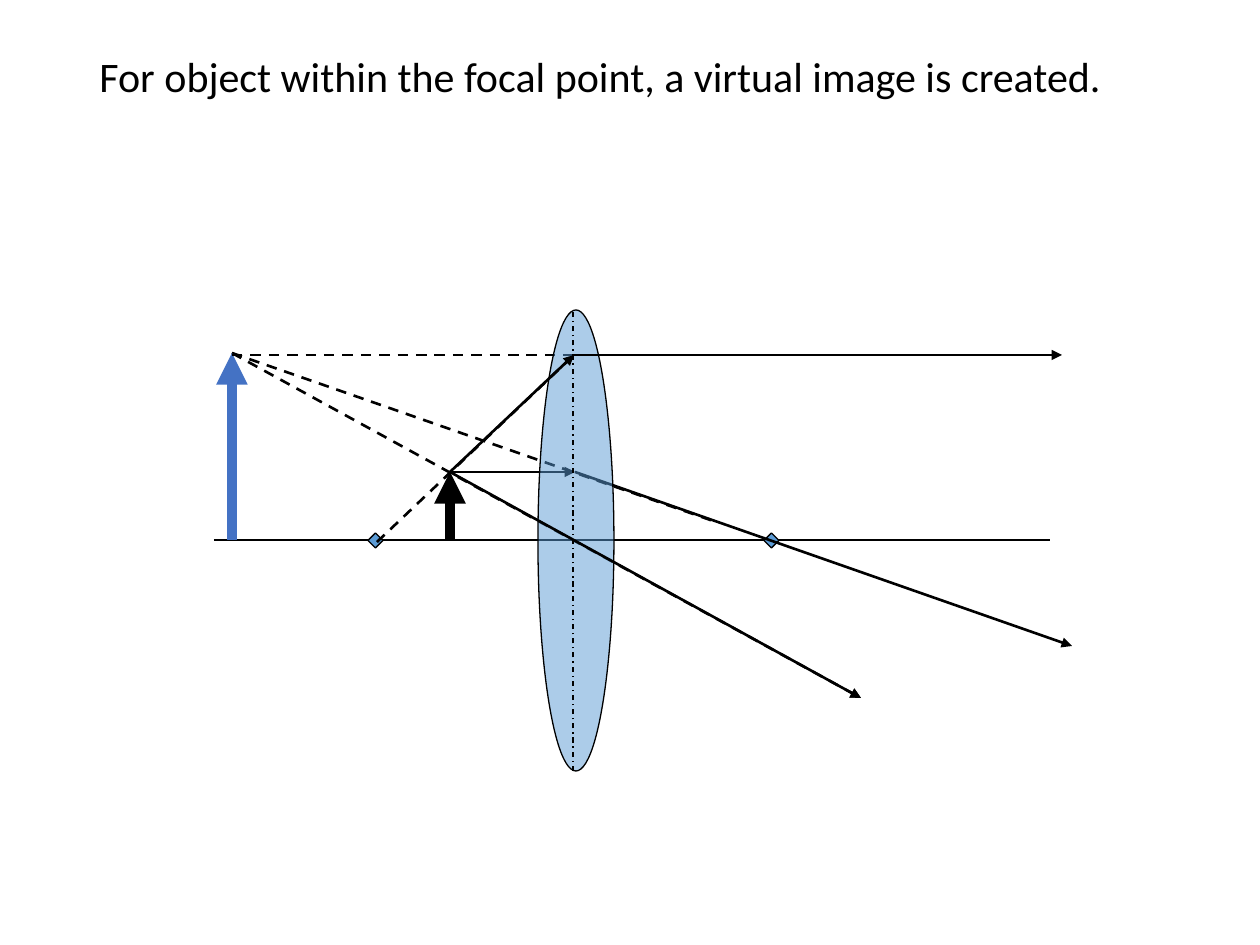
from pptx import Presentation
from pptx import util as u
from pptx.dml.color import RGBColor
from pptx.enum import dml, shapes, text
from pptx.oxml.ns import qn
from lxml import etree

BLACK, LENS, IMAGE = "000000", "5B9BD5", "4472C4"
DASH, DASH_DOT = dml.MSO_LINE.DASH, dml.MSO_LINE.DASH_DOT


def rgb(value):
    return RGBColor.from_string(value)


def px(n):
    return u.Emu(round(n * 914400 / 126))


def assign(obj, **values):
    for name, value in values.items():
        setattr(obj, name, value)


class Diagram:
    """Draws the elements of a ray diagram on one slide."""

    font = {"name": "Calibri", "size": u.Pt(24)}
    thin, ray_width, thick = 0.75, 1.5, 6

    def __init__(self, slide):
        self.s = slide

    def stroke(self, line, width, color=BLACK, dash=None):
        line.color.rgb = rgb(color)
        assign(line, width=u.Pt(width), dash_style=dash)

    def line(self, start, end, width=ray_width, color=BLACK, dash=None, arrow=False):
        sp = self.s.shapes.add_connector(
            shapes.MSO_CONNECTOR.STRAIGHT, *map(px, (*start, *end)))
        self.stroke(sp.line, width, color, dash)
        props = sp._element.spPr
        if arrow:
            etree.SubElement(props.find(qn("a:ln")), qn("a:tailEnd"), type="triangle")
        etree.SubElement(props, qn("a:effectLst"))

    def shape(self, kind, box, fill, alpha=None):
        sp = self.s.shapes.add_shape(kind, *map(px, box))
        sp.shadow.inherit = False
        sp.fill.solid()
        sp.fill.fore_color.rgb = rgb(fill)
        self.stroke(sp.line, self.thin)
        if alpha:
            color = sp._element.spPr.find(qn("a:solidFill"))[0]
            etree.SubElement(color, qn("a:alpha"), val=str(alpha * 1000))

    def title(self, box, words):
        tf = self.s.shapes.add_textbox(*map(px, box)).text_frame
        assign(tf, word_wrap=True, vertical_anchor=text.MSO_ANCHOR.TOP)
        p = tf.paragraphs[0]
        p.line_spacing = 0.9
        r = p.add_run()
        r.text = words
        assign(r.font, **self.font)
        r.font.color.rgb = rgb(BLACK)


def main():
    prs = Presentation()
    assign(prs, slide_width=u.Inches(10), slide_height=u.Inches(7.5))
    d = Diagram(prs.slides.add_slide(prs.slide_layouts[6]))

    axis, lens = 540, 574
    object_tip, image_tip = (450, 472), (232, 353)
    lens_mid, lens_top = (lens + 1, 472), (lens, 355)
    center_ray_end = (861, 698)

    d.line((214, axis), (1050, axis), d.thin)
    for x in (771, 375):
        d.shape(shapes.MSO_SHAPE.DIAMOND, (x - 7, axis - 7, 15, 15), LENS)
    d.line((object_tip[0], axis), object_tip, d.thick, arrow=True)
    d.line(object_tip, lens_mid, arrow=True)
    d.line(lens_mid, (1072, 646), arrow=True)
    d.line(image_tip, (716, 522), dash=DASH)
    d.line(image_tip, center_ray_end, dash=DASH, arrow=True)
    d.line((image_tip[0], axis), image_tip, d.thick, IMAGE, arrow=True)
    d.line((image_tip[0], lens_top[1]), lens_top, dash=DASH)
    d.shape(shapes.MSO_SHAPE.OVAL, (538, 310, 76, 461), LENS, alpha=50)
    d.line(object_tip, center_ray_end, arrow=True)
    d.line((377, 542), lens_top, dash=DASH)
    d.line(object_tip, lens_top, arrow=True)
    d.line(lens_top, (1062, lens_top[1]), arrow=True)
    d.title((87, 50, 1086, 183),
            "For object within the focal point, a virtual image is created.")
    d.line((573, 771), (573, 309), d.thin, dash=DASH_DOT)

    prs.save("out.pptx")


if __name__ == "__main__":
    main()
